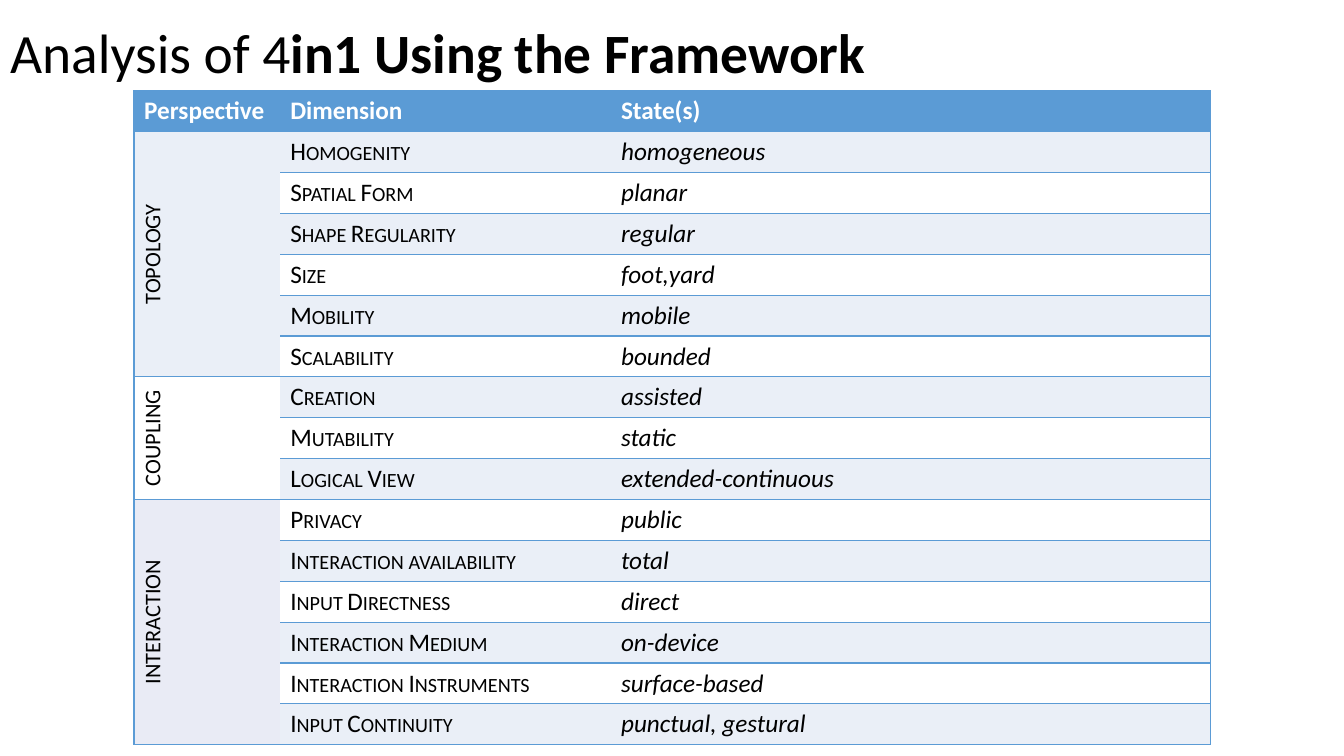
from lxml import etree
from pptx import Presentation
from pptx import util as u
from pptx.dml.color import RGBColor
from pptx.enum import text
from pptx.oxml import ns

FONT = "Calibri"
BLUE, PALE, LILAC = "5B9BD5", "EAEFF7", "E9EBF5"
WHITE, BLACK = "FFFFFF", "000000"

HEADINGS = ["Perspective", "Dimension", "State(s)"]
COLUMN_WIDTHS = [1.45, 3.28, 5.95]
PERSPECTIVES = [
    ("TOPOLOGY", PALE, [
        ("Homogenity", "homogeneous"),
        ("Spatial Form", "planar"),
        ("Shape Regularity", "regular"),
        ("Size", "foot,yard"),
        ("Mobility", "mobile"),
        ("Scalability", "bounded"),
    ]),
    ("COUPLING", WHITE, [
        ("Creation", "assisted"),
        ("Mutability", "static"),
        ("Logical View", "extended-continuous"),
    ]),
    ("INTERACTION", LILAC, [
        ("Privacy", "public"),
        ("Interaction availability", "total"),
        ("Input Directness", "direct"),
        ("Interaction Medium", "on-device"),
        ("Interaction Instruments", "surface-based"),
        ("Input Continuity", "punctual, gestural"),
    ]),
]


def color(value):
    return RGBColor.from_string(value)


def style_span(span, size, ink=BLACK, bold=False, italic=False):
    font = span.font
    font.name, font.size, font.bold, font.italic = FONT, u.Pt(size), bold, italic
    font.color.rgb = color(ink)


def style_cell(cell, fill, sides):
    """Fill the cell and rule only the given sides, named by L, R, T and B."""
    props = cell._tc.get_or_add_tcPr()
    for side in "LRTB":
        line = etree.SubElement(props, ns.qn(f"a:ln{side}"), w=str(u.Pt(1)))
        if side in sides:
            solid = etree.SubElement(line, ns.qn("a:solidFill"))
            etree.SubElement(solid, ns.qn("a:srgbClr"), val=BLUE)
        else:
            etree.SubElement(line, ns.qn("a:noFill"))
    cell.fill.solid()
    cell.fill.fore_color.rgb = color(fill)


def write_cell(cell, words, size=18, **look):
    para = cell.text_frame.paragraphs[0]
    para.text = words
    style_span(para.runs[0], size, **look)
    return para


def add_title(page, left, top, width, height):
    title = page.shapes.title
    title.left, title.top, title.width, title.height = map(
        u.Inches, (left, top, width, height))
    frame = title.text_frame
    frame.auto_size = text.MSO_AUTO_SIZE.NONE
    frame.vertical_anchor = text.MSO_ANCHOR.MIDDLE
    para = frame.paragraphs[0]
    para.alignment = text.PP_ALIGN.LEFT
    para.line_spacing = 0.9
    for words, bold in (("Analysis of 4", False), ("in1 Using the Framework", True)):
        span = para.add_run()
        span.text = words
        style_span(span, 39.6, bold=bold)


def add_perspective(grid, first, name, fill, count):
    """Merge the first column over count rows and turn its label upwards."""
    last = first + count - 1
    head = grid.cell(first, 0)
    head.merge(grid.cell(last, 0))
    for row in range(first, last + 1):
        sides = "LTB" if row == first else "LB" if row == last else "L"
        style_cell(grid.cell(row, 0), fill, sides)
    write_cell(head, name, 16).alignment = text.PP_ALIGN.CENTER
    head._tc.get_or_add_tcPr().set("vert", "vert270")


def add_framework_table(page, left, top, width, height):
    row_count = 1 + sum(len(entries) for _, _, entries in PERSPECTIVES)
    grid = page.shapes.add_table(
        row_count, len(HEADINGS), *map(u.Inches, (left, top, width, height))).table
    for column, size in zip(grid.columns, COLUMN_WIDTHS):
        column.width = u.Inches(size)
    for row in grid.rows:
        row.height = u.Inches(height / row_count)

    for index, (heading, sides) in enumerate(zip(HEADINGS, ("LTB", "TB", "RTB"))):
        cell = grid.cell(0, index)
        style_cell(cell, BLUE, sides)
        write_cell(cell, heading, ink=WHITE, bold=True)

    row = 1
    for name, fill, entries in PERSPECTIVES:
        add_perspective(grid, row, name, fill, len(entries))
        for dimension, state in entries:
            band = PALE if row % 2 else WHITE
            dimension_cell, state_cell = grid.cell(row, 1), grid.cell(row, 2)
            style_cell(dimension_cell, band, "TB")
            style_cell(state_cell, band, "RTB")
            para = write_cell(dimension_cell, dimension)
            para.runs[0]._r.get_or_add_rPr().set("cap", "small")
            write_cell(state_cell, state, italic=True)
            row += 1


def main():
    deck = Presentation()
    deck.slide_width, deck.slide_height = u.Inches(13.33), u.Inches(7.5)
    page = deck.slides.add_slide(deck.slide_layouts[5])
    add_framework_table(page, 1.33, 0.9, sum(COLUMN_WIDTHS), 6.48)
    add_title(page, 0, 0.3, 10.18, 0.5)
    deck.save("out.pptx")


if __name__ == "__main__":
    main()
